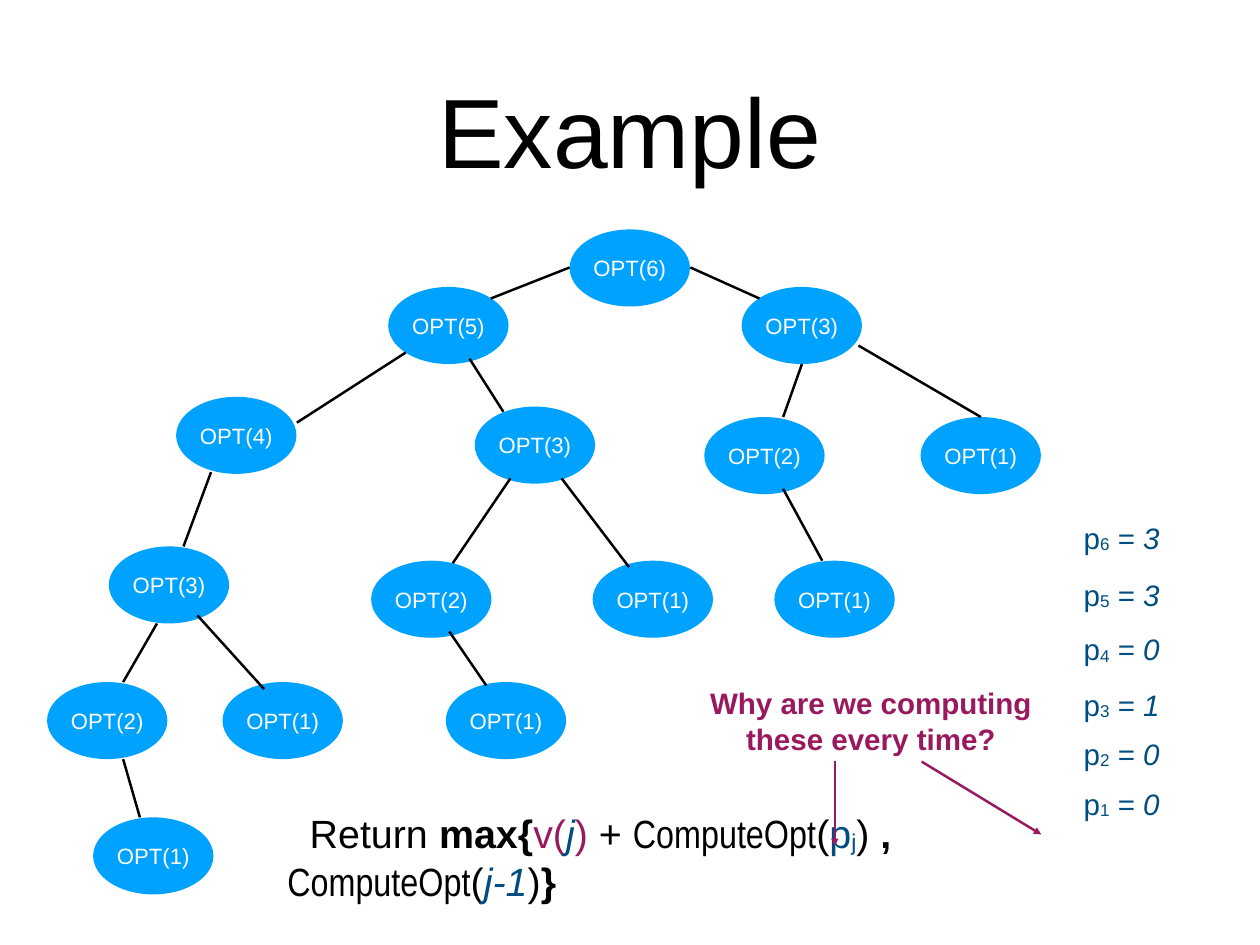
from pptx import Presentation
from pptx.dml.color import RGBColor
from pptx.enum.shapes import MSO_CONNECTOR, MSO_SHAPE
from pptx.enum.text import MSO_ANCHOR, PP_ALIGN
from pptx.oxml.ns import qn
from pptx.util import Cm, Pt
from lxml.etree import SubElement

BLACK, WHITE, SKY, NAVY, PLUM = "000000", "FFFFFF", "00A2FF", "004D80", "99195E"
BOLD, ITALIC, SUB = {"bold": True}, {"italic": True}, {"baseline": -5999}
NARROW = {"name": "Arial Narrow"}

NODES = [
    (6, 16.33, 6.58), (5, 11.13, 8.23), (3, 21.26, 8.23), (4, 5.05, 11.38),
    (3, 13.61, 11.66), (2, 20.19, 11.96), (1, 26.39, 11.96), (3, 3.12, 15.67),
    (2, 10.64, 16.08), (1, 16.99, 16.08), (1, 22.2, 16.08), (2, 1.35, 19.56),
    (1, 6.38, 19.56), (1, 12.78, 19.56), (1, 2.67, 23.44),
]
EDGES = [
    (14.07, 8.56, 16.33, 7.67), (19.79, 7.67, 21.77, 8.56),
    (8.51, 12.12, 11.63, 10.11), (5.26, 15.67, 6.05, 13.54),
    (3.53, 19.56, 4.5, 17.88), (7.57, 19.76, 5.66, 17.65),
    (4.01, 23.44, 3.53, 21.77), (14.43, 11.81, 13.46, 10.29),
    (12.98, 16.15, 14.63, 13.72), (13.94, 19.66, 12.88, 18.11),
    (18.03, 16.26, 16.1, 13.72), (22.45, 11.96, 22.99, 10.44),
    (28.12, 11.96, 24.61, 9.91), (23.57, 16.08, 22.45, 14.02),
]
ARROWS = [(23.93, 21.82, 23.93, 24.26), (26.42, 21.84, 29.85, 23.93)]
P_VALUES = [(6, 3, 14.78), (5, 3, 16.41), (4, 0, 17.98),
            (3, 1, 19.56), (2, 0, 20.98), (1, 0, 22.4)]
FORMULA = [
    ("Return ", BLACK, {}), ("max{", BLACK, BOLD), ("v(", PLUM, {}),
    ("j", NAVY, ITALIC), (")", PLUM, {}), (" + ", BLACK, {}),
    ("ComputeOpt", BLACK, NARROW), ("(", BLACK, {}), ("p", NAVY, {}),
    ("j", NAVY, SUB), (") ", BLACK, {}), (", ", BLACK, BOLD),
    ("ComputeOpt", BLACK, NARROW), ("(", BLACK, {}), ("j-1", NAVY, ITALIC),
    (")", BLACK, {}), ("}", BLACK, BOLD),
]


def rgb(value):
    """Turn a hex string into a colour."""
    return RGBColor.from_string(value)


class TreeSlide:
    """Holds the style and the current slide."""

    font = "Arial"
    inset = Cm(0.14)
    node_size = (3.45, 2.21)

    def __init__(self, prs):
        """Add a title-only slide."""
        self.s = prs.slides.add_slide(prs.slide_layouts[5])

    def put_runs(self, tf, runs, size, align=PP_ALIGN.CENTER, wrap=False, indent=0):
        """Fill a text frame with formatted runs."""
        frame = {"word_wrap": wrap, "vertical_anchor": MSO_ANCHOR.MIDDLE}
        for side in ("left", "top", "right", "bottom"):
            frame["margin_" + side] = self.inset
        for key, value in frame.items():
            setattr(tf, key, value)
        p = tf.paragraphs[0]
        p.alignment = align
        if indent:
            p._p.get_or_add_pPr().set("indent", str(Cm(indent)))
        for text, color, style in runs:
            if text == "\n":
                p.add_line_break()
                continue
            r = p.add_run()
            r.text = text
            r.font.color.rgb = rgb(color)
            for key, value in {"name": self.font, "size": Pt(size), **style}.items():
                if key == "baseline":
                    r._r.get_or_add_rPr().set(key, str(value))
                else:
                    setattr(r.font, key, value)

    def title(self, text, left, top, width, height):
        """Place and format the title."""
        sp = self.s.shapes.title
        place = {"left": left, "top": top, "width": width, "height": height}
        for key, value in place.items():
            setattr(sp, key, Cm(value))
        self.put_runs(sp.text_frame, [(text, BLACK, {})], 80, wrap=True)

    def node(self, number, left, top):
        """Draw one subproblem of the tree."""
        box = map(Cm, (left, top, *self.node_size))
        sp = self.s.shapes.add_shape(MSO_SHAPE.OVAL, *box)
        sp.shadow.inherit = False
        sp.fill.solid()
        sp.fill.fore_color.rgb = rgb(SKY)
        sp.line.fill.background()
        self.put_runs(sp.text_frame, [(f"OPT({number})", WHITE, {})], 18)

    def line(self, ends, color=BLACK, arrow=False):
        """Draw a straight line, with an arrowhead if asked."""
        c = self.s.shapes.add_connector(MSO_CONNECTOR.STRAIGHT, *map(Cm, ends))
        c.line.color.rgb = rgb(color)
        c.line.width = Pt(2)
        props = c._element.spPr
        if arrow:
            SubElement(props.find(qn("a:ln")), qn("a:tailEnd"), type="triangle")
        SubElement(props, qn("a:effectLst"))

    def text(self, runs, box, size, **options):
        """Add a text box."""
        sp = self.s.shapes.add_textbox(*map(Cm, box))
        self.put_runs(sp.text_frame, runs, size, **options)


def main():
    """Build and save the slide."""
    prs = Presentation()
    prs.slide_width, prs.slide_height = Cm(36.12), Cm(27.1)
    s = TreeSlide(prs)
    s.title("Example", 2.64, 0.71, 30.84, 5.99)
    for node in NODES:
        s.node(*node)
    for ends in EDGES:
        s.line(ends)
    s.text(FORMULA, (8.1, 23.72, 23.09, 1.7), 32,
           align=PP_ALIGN.LEFT, wrap=True, indent=0.64)
    for index, value, top in P_VALUES:
        runs = [("p", NAVY, {}), (str(index), NAVY, SUB),
                (" = ", NAVY, {}), (str(value), NAVY, ITALIC)]
        s.text(runs, (30.86, top, 2.59, 1.27), 24)
    question = [("Why are we computing", PLUM, BOLD), ("\n", PLUM, BOLD),
                ("these every time?", PLUM, BOLD)]
    s.text(question, (20.19, 19.51, 9.55, 2.31), 24)
    for ends in ARROWS:
        s.line(ends, PLUM, arrow=True)
    prs.save("out.pptx")


if __name__ == "__main__":
    main()
